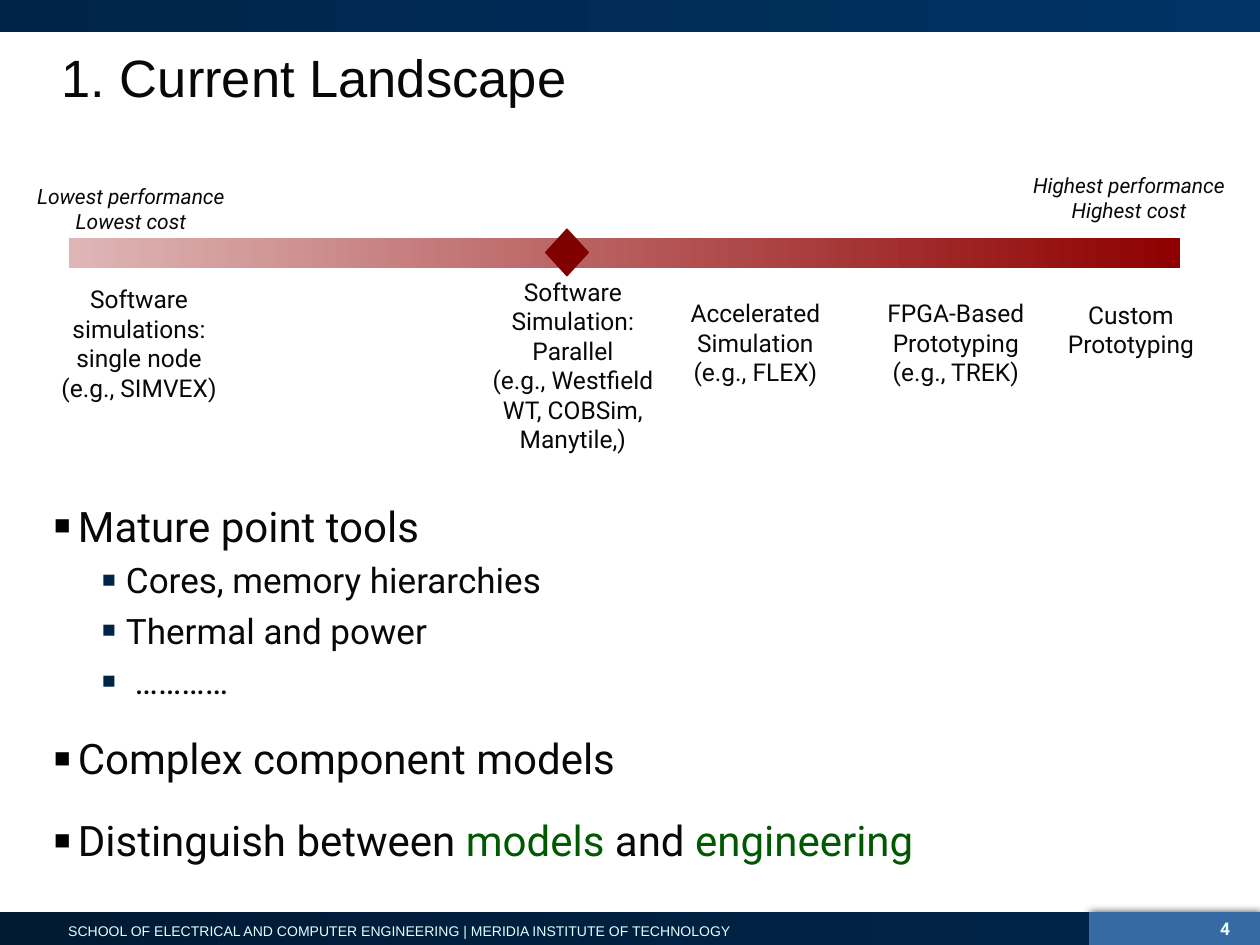
from lxml import etree
from pptx import Presentation
from pptx.dml.color import RGBColor
from pptx.enum.shapes import MSO_SHAPE as SHAPE
from pptx.enum.text import MSO_ANCHOR as ANCHOR, PP_ALIGN as ALIGN
from pptx.oxml.ns import qn
from pptx.util import Cm, Pt

COLORS = {
    "ink": "080808", "pale": "E5FFFF", "white": "FFFFFF", "black": "000000",
    "night": "001A34", "navy": "002448", "blue": "003366", "panel": "366AA4",
    "pink": "DFB6B6", "red": "8E0000", "maroon": "800000", "green": "005800",
}
BODY = {"name": "Roboto", "size": 14, "color": "ink"}
ENDS = {**BODY, "size": 12, "italic": True}
TITLE = {"name": "Arial", "size": 30, "color": "ink"}
FOOTER = {"name": "Arial", "size": 8, "color": "pale"}
NUMBER = {"name": "Roboto", "size": 10, "color": "pale", "bold": True}

SPECTRUM_LABELS = [
    ((0.76, 2.26, 4.09, 2.64), BODY,
     ["Software simulations: single node", "(e.g., SIMVEX)"]),
    ((9.53, 2.11, 4.04, 3.84), BODY,
     ["Software Simulation: Parallel", "(e.g., Westfield WT, COBSim, Manytile,)"]),
    ((13.54, 2.54, 3.38, 2.03), BODY, ["Accelerated Simulation", "(e.g., FLEX)"]),
    ((17.58, 2.54, 3.38, 2.03), BODY, ["FPGA-Based Prototyping", "(e.g., TREK)"]),
    ((21.11, 2.57, 3.38, 1.45), BODY, ["Custom Prototyping"]),
    ((20.12, 0, 5.28, 1.27), ENDS, ["Highest performance", "Highest cost"]),
    ((0, 0.23, 5.28, 1.27), ENDS, ["Lowest performance", "Lowest cost"]),
]
POINTS = [
    (0, [("Mature point tools", "ink")]),
    (1, [("Cores, memory hierarchies", "ink")]),
    (1, [("Thermal and power", "ink")]),
    (1, [(" …………", "ink")]),
    (0, [("Complex component models", "ink")]),
    (0, [("Distinguish between ", "ink"), ("models", "green"),
         (" and ", "ink"), ("engineering", "green")]),
]
LEVELS = [
    {"size": 24, "before": 18, "left": 0.48, "bullet": "black"},
    {"size": 20, "before": 4.7, "left": 1.45, "bullet": "navy"},
]


def rgb(name):
    return RGBColor.from_string(COLORS[name])


def add_run(p, text, style):
    r = p.add_run()
    r.text = text
    for key, value in style.items():
        if key == "color":
            r.font.color.rgb = rgb(value)
        else:
            setattr(r.font, key, Pt(value) if key == "size" else value)


def add_text(s, box, lines, style, align=ALIGN.CENTER, wrap=True):
    tf = s.shapes.add_textbox(*map(Cm, box)).text_frame
    tf.word_wrap = wrap
    for i, line in enumerate(lines):
        p = tf.paragraphs[0] if i == 0 else tf.add_paragraph()
        p.alignment = align
        add_run(p, line, style)


def add_block(s, box, fills, line=None, kind=SHAPE.RECTANGLE):
    sp = s.shapes.add_shape(kind, *map(Cm, box))
    sp.shadow.inherit = False
    if len(fills) == 1:
        sp.fill.solid()
        sp.fill.fore_color.rgb = rgb(fills[0])
    else:
        sp.fill.gradient()
        sp.fill.gradient_angle = 0
        for stop, name in zip(sp.fill.gradient_stops, fills):
            stop.color.rgb = rgb(name)
    if line:
        sp.line.color.rgb = rgb(line)
        sp.line.width = Pt(0.75)
    else:
        sp.line.fill.background()
    return sp


def add_shadow(sp):
    effects = sp.element.spPr.find(qn("a:effectLst"))
    shadow = etree.SubElement(effects, qn("a:outerShdw"),
                              blurRad=str(Pt(5)), dist=str(Pt(1)), dir="0")
    color = etree.SubElement(shadow, qn("a:srgbClr"), val=COLORS["black"])
    etree.SubElement(color, qn("a:alpha"), val="75000")


def add_bullet(p, color, left, hang):
    pPr = p._p.get_or_add_pPr()
    pPr.set("marL", str(Cm(left)))
    pPr.set("indent", str(-Cm(hang)))
    clr = etree.SubElement(pPr, qn("a:buClr"))
    etree.SubElement(clr, qn("a:srgbClr"), val=COLORS[color])
    etree.SubElement(pPr, qn("a:buSzPct"), val="65000")
    etree.SubElement(pPr, qn("a:buFont"), typeface="Arial")
    etree.SubElement(pPr, qn("a:buChar"), char="■")


def build_footer(s, box):
    x, y, w, h = box
    panel_w = 3.45
    add_shadow(add_block(s, (x + w - panel_w, y, panel_w, h), ["panel"]))
    add_block(s, (x, y, w - panel_w, h), ["night", "navy"])
    add_text(s, (x + 1.04, y + 0.08, 14.05, 0.58),
             ["SCHOOL OF ELECTRICAL AND COMPUTER ENGINEERING | "
              "MERIDIA INSTITUTE OF TECHNOLOGY"], FOOTER, wrap=False)
    add_text(s, (x + w - 1.42, y, 1.07, 0.58), ["4"], NUMBER, ALIGN.RIGHT)


def build_title(s, box):
    sp = s.shapes.title
    for key, value in zip(("left", "top", "width", "height"), box):
        setattr(sp, key, Cm(value))
    tf = sp.text_frame
    tf.vertical_anchor = ANCHOR.MIDDLE
    p = tf.paragraphs[0]
    p.alignment = ALIGN.LEFT
    add_run(p, "1. Current Landscape", TITLE)


def build_spectrum(s, box):
    x, y, w, h = box
    add_block(s, (x + 1.37, y + 1.43, w - 2.97, 0.64), ["pink", "red"], "white")
    for (dx, dy, width, height), style, lines in SPECTRUM_LABELS:
        add_text(s, (x + dx, y + dy, width, height), lines, style)
    add_block(s, (x + 11, y + 1.27, 0.86, 0.94), ["maroon"], "maroon", SHAPE.DIAMOND)


def build_points(s, box):
    tf = s.shapes.add_textbox(*map(Cm, box)).text_frame
    tf.word_wrap = True
    for i, (level, runs) in enumerate(POINTS):
        look = LEVELS[level]
        p = tf.paragraphs[0] if i == 0 else tf.add_paragraph()
        p.level = level
        p.space_before = Pt(look["before"])
        add_bullet(p, look["bullet"], look["left"], 0.48)
        for text, color in runs:
            add_run(p, text, {**BODY, "size": look["size"], "color": color})


def main():
    prs = Presentation()
    prs.slide_width, prs.slide_height = Cm(25.4), Cm(19.05)
    s = prs.slides.add_slide(prs.slide_layouts[5])
    build_footer(s, (0, 18.39, 25.4, 0.66))
    add_block(s, (0, 0, 25.4, 0.64), ["navy", "blue"])
    build_title(s, (0.99, 0.61, 23.62, 1.88))
    build_spectrum(s, (0, 3.35, 25.4, 5.95))
    build_points(s, (0.84, 9.96, 23.65, 8.05))
    prs.save("out.pptx")


if __name__ == "__main__":
    main()
